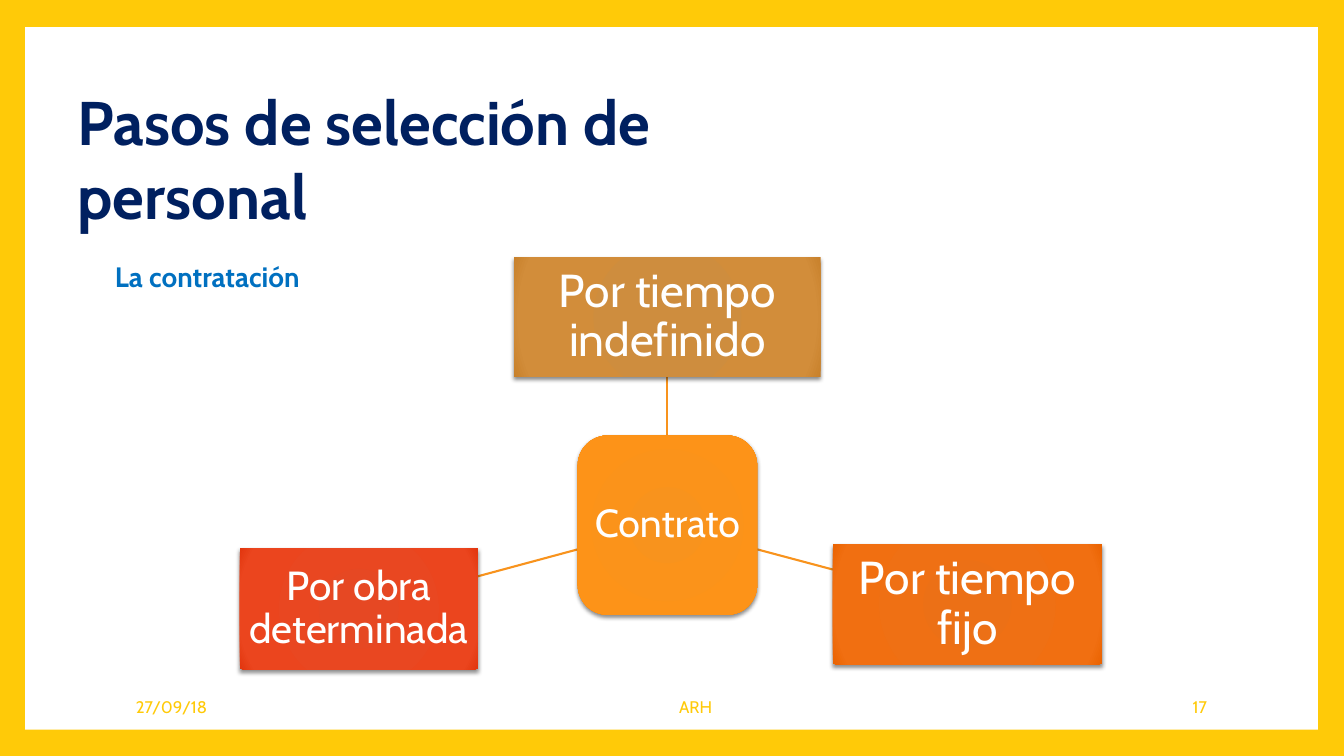
from lxml import etree
from pptx import Presentation
from pptx.dml.color import RGBColor
from pptx.enum.shapes import MSO_CONNECTOR, MSO_SHAPE
from pptx.enum.text import MSO_ANCHOR, MSO_AUTO_SIZE, PP_ALIGN
from pptx.oxml import parse_xml
from pptx.oxml.ns import qn
from pptx.util import Inches, Pt

FONT = "Cabin"
YELLOW = RGBColor(0xFF, 0xCA, 0x08)
WHITE = RGBColor(0xFF, 0xFF, 0xFF)
NAVY = RGBColor(0x00, 0x20, 0x60)
BLUE = RGBColor(0x00, 0x70, 0xC0)
ORANGE = RGBColor(0xF8, 0x93, 0x1D)
ORANGE_SHADES = (ORANGE, RGBColor(0xFD, 0x93, 0x18), RGBColor(0xF5, 0x87, 0x06))
OCHRE_SHADES = (RGBColor(0xCE, 0x8D, 0x3E), RGBColor(0xD2, 0x8D, 0x3A), RGBColor(0xC8, 0x81, 0x2B))
TANGERINE_SHADES = (RGBColor(0xEC, 0x70, 0x16), RGBColor(0xF1, 0x6F, 0x11), RGBColor(0xEA, 0x63, 0x01))
RED_SHADES = (RGBColor(0xE6, 0x48, 0x23), RGBColor(0xEB, 0x45, 0x1E), RGBColor(0xE2, 0x36, 0x0E))
RECTANGLE = MSO_SHAPE.RECTANGLE
ROUNDED = MSO_SHAPE.ROUNDED_RECTANGLE
STRAIGHT = MSO_CONNECTOR.STRAIGHT
LEFT, CENTER, RIGHT = PP_ALIGN.LEFT, PP_ALIGN.CENTER, PP_ALIGN.RIGHT
TOP, MIDDLE = MSO_ANCHOR.TOP, MSO_ANCHOR.MIDDLE
NO_AUTOFIT = MSO_AUTO_SIZE.NONE
DRAWING = 'xmlns:a="http://schemas.openxmlformats.org/drawingml/2006/main"'


def write_text(shape, text, size, color, bold=False, align=LEFT, anchor=TOP, wrap=True):
    frame = shape.text_frame
    frame.word_wrap = wrap
    frame.auto_size = NO_AUTOFIT
    frame.vertical_anchor = anchor
    paragraph = frame.paragraphs[0]
    paragraph.alignment = align
    run = paragraph.add_run()
    run.text = text
    run.font.name = FONT
    run.font.size = Pt(size)
    run.font.bold = bold
    run.font.color.rgb = color


def add_glow_box(slide, kind, box, shades):
    shape = slide.shapes.add_shape(kind, *[Inches(value) for value in box])
    shape.line.fill.background()
    shape.fill.background()
    stops = "".join(
        f'<a:gs pos="{position}"><a:srgbClr val="{shade}"/></a:gs>'
        for position, shade in zip((0, 90000, 100000), shades)
    )
    properties = shape.element.spPr
    properties.replace(properties.find(qn("a:noFill")), parse_xml(
        f'<a:gradFill {DRAWING} rotWithShape="1"><a:gsLst>{stops}</a:gsLst><a:path path="circle">'
        '<a:fillToRect l="100000" t="100000" r="100000" b="100000"/></a:path></a:gradFill>'
    ))
    shape.shadow.inherit = False
    properties.find(qn("a:effectLst")).append(parse_xml(
        f'<a:outerShdw {DRAWING} blurRad="{Pt(3)}" dist="{Pt(2)}" dir="5400000" rotWithShape="0">'
        '<a:srgbClr val="000000"><a:alpha val="45000"/></a:srgbClr></a:outerShdw>'
    ))
    return shape


presentation = Presentation()
presentation.slide_width = Inches(13.33)
presentation.slide_height = Inches(7.5)
slide = presentation.slides.add_slide(presentation.slide_layouts[5])
slide.background.fill.solid()
slide.background.fill.fore_color.rgb = YELLOW

panel = slide.shapes.add_shape(RECTANGLE, Inches(0.25), Inches(0.27), Inches(12.82), Inches(6.97))
panel.fill.solid()
panel.fill.fore_color.rgb = WHITE
panel.line.fill.background()
panel.shadow.inherit = False
slide.shapes._spTree.insert(2, panel.element)

title = slide.shapes.title
title.left, title.top = Inches(0.67), Inches(0.78)
title.width, title.height = Inches(7.05), Inches(1.58)
write_text(title, "Pasos de selección de personal", 44, NAVY, bold=True)

subtitle = slide.shapes.add_textbox(Inches(1.04), Inches(2.53), Inches(2.1), Inches(0.44))
write_text(subtitle, "La contratación", 20, BLUE, bold=True, wrap=False)

spokes = [
    ((6.62, 4.32), (6.62, 3.74)),
    ((7.51, 5.45), (8.26, 5.65)),
    ((5.73, 5.45), (4.73, 5.72)),
]
for start, end in spokes:
    spoke = slide.shapes.add_connector(STRAIGHT, *[Inches(value) for value in start + end])
    spoke.line.color.rgb = ORANGE
    spoke.line.width = Pt(1.5)
    etree.SubElement(spoke.element.spPr, qn("a:effectLst"))

contract_boxes = [
    (ROUNDED, (5.73, 4.32, 1.78, 1.78), ORANGE_SHADES, "Contrato", 28),
    (RECTANGLE, (5.1, 2.55, 3.04, 1.19), OCHRE_SHADES, "Por tiempo indefinido", 33),
    (RECTANGLE, (8.26, 5.4, 2.67, 1.19), TANGERINE_SHADES, "Por tiempo fijo", 33),
    (RECTANGLE, (2.38, 5.44, 2.36, 1.2), RED_SHADES, "Por obra determinada", 29),
]
for kind, box, shades, label, size in contract_boxes:
    shape = add_glow_box(slide, kind, box, shades)
    write_text(shape, label, size, WHITE, align=CENTER, anchor=MIDDLE)
    frame = shape.text_frame
    frame.margin_left = frame.margin_right = Inches(0.08)
    frame.margin_top = frame.margin_bottom = Inches(0.08)
    frame.paragraphs[0].line_spacing = 0.9

footers = [
    (1.25, 2.55, "27/09/18", LEFT),
    (4.32, 5.16, "ARH", CENTER),
    (10.2, 1.87, "17", RIGHT),
]
for left, width, text, align in footers:
    footer = slide.shapes.add_textbox(Inches(left), Inches(6.81), Inches(width), Inches(0.4))
    write_text(footer, text, 12, YELLOW, align=align, anchor=MIDDLE)

presentation.save("out.pptx")
